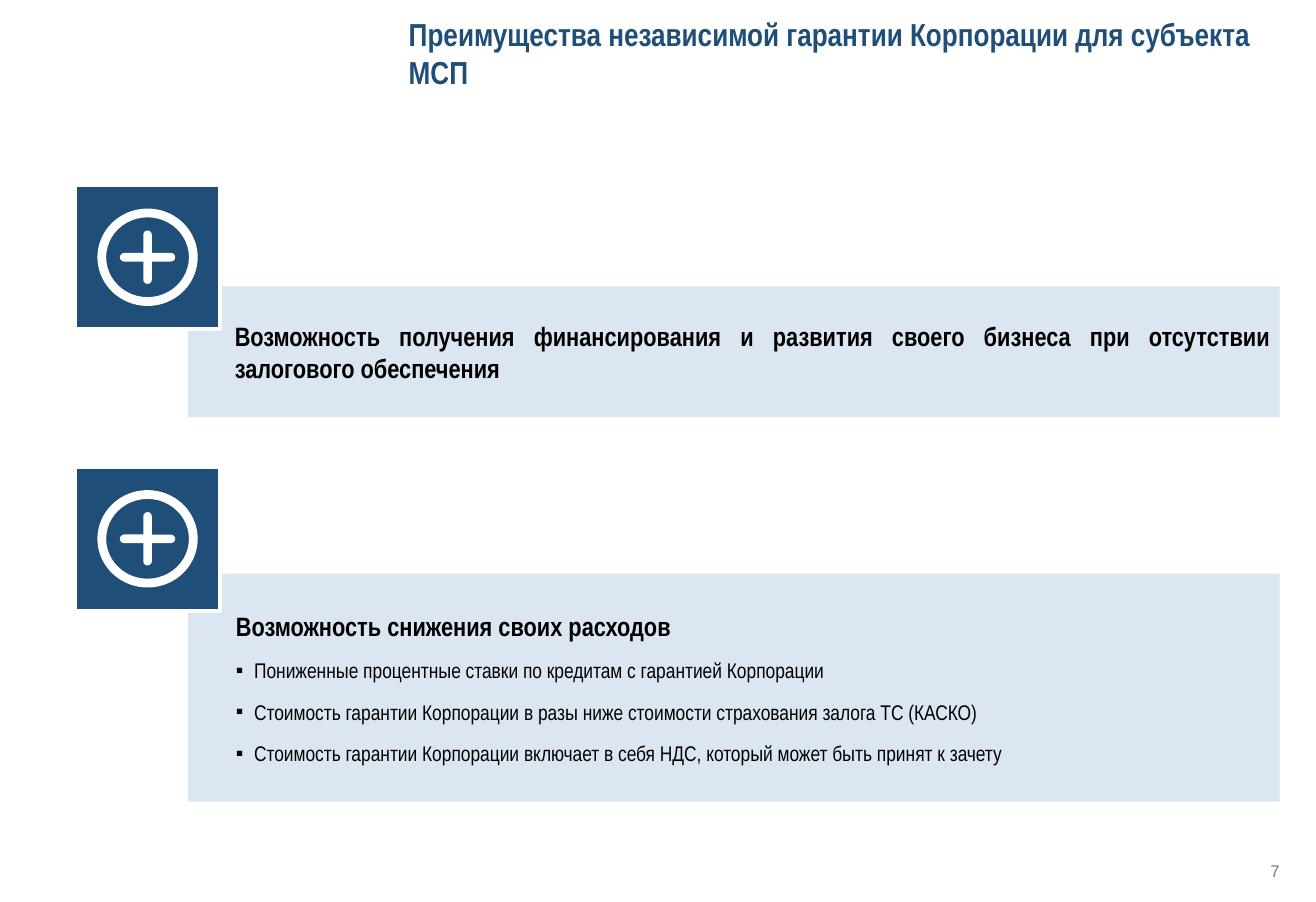
from dataclasses import dataclass

from lxml import etree
from pptx import Presentation
from pptx.dml.color import RGBColor
from pptx.enum import shapes, text
from pptx.oxml import ns
from pptx.util import Inches, Pt


@dataclass(frozen=True)
class Theme:
    navy: str = "1F4E79"
    pale: str = "DCE6F2"
    white: str = "FFFFFF"
    black: str = "000000"
    grey: str = "808080"
    narrow: str = "Arial Narrow"
    plain: str = "Arial"
    title: float = 24
    heading: float = 20
    item: float = 16
    number: float = 12.7
    gap: float = 12
    border: float = 3


class SlideBuilder:
    """Draws the elements of one slide in the given theme."""

    def __init__(self, page, theme):
        self.page = page
        self.theme = theme

    def place(self, shape, left, top, width, height):
        shape.left, shape.top = Inches(left), Inches(top)
        shape.width, shape.height = Inches(width), Inches(height)

    def fill(self, shape, color):
        shape.fill.solid()
        shape.fill.fore_color.rgb = RGBColor.from_string(color)

    def prepare(self, frame, side=0.1, edge=0.05):
        frame.word_wrap = True
        frame.auto_size = text.MSO_AUTO_SIZE.NONE
        frame.vertical_anchor = text.MSO_ANCHOR.MIDDLE
        frame.margin_left = frame.margin_right = Inches(side)
        frame.margin_top = frame.margin_bottom = Inches(edge)

    def style(self, para, size, color, bold=False, face=None):
        font = para.font
        font.name = face or self.theme.narrow
        font.size = Pt(size)
        font.bold = bold
        font.color.rgb = RGBColor.from_string(color)

    def indent(self, para, margin, first=0, bullet=None):
        """Sets the left margin, first-line offset and bullet (None for no bullet)."""
        props = para._p.get_or_add_pPr()
        props.set("marL", str(Inches(margin)))
        props.set("indent", str(Inches(first)))
        if bullet:
            etree.SubElement(props, ns.qn("a:buFont")).set("typeface", self.theme.plain)
            etree.SubElement(props, ns.qn("a:buChar")).set("char", bullet)
        else:
            etree.SubElement(props, ns.qn("a:buNone"))

    def title(self, wording, *area):
        box = self.page.shapes.title
        self.place(box, *area)
        self.prepare(box.text_frame)
        para = box.text_frame.paragraphs[0]
        para.text = wording
        para.alignment = text.PP_ALIGN.LEFT
        self.style(para, self.theme.title, self.theme.navy, bold=True)

    def panel(self, wording, *area):
        box = self.page.shapes.add_shape(
            shapes.MSO_SHAPE.RECTANGLE, *map(Inches, area))
        box.shadow.inherit = False
        box.line.fill.background()
        self.fill(box, self.theme.pale)
        self.prepare(box.text_frame)
        para = box.text_frame.paragraphs[0]
        para.text = wording
        para.alignment = text.PP_ALIGN.JUSTIFY
        self.indent(para, 0.39)
        self.style(para, self.theme.heading, self.theme.black, bold=True)

    def list_panel(self, heading, items, *area):
        box = self.page.placeholders[1]
        self.place(box, *area)
        self.fill(box, self.theme.pale)
        frame = box.text_frame
        self.prepare(frame)
        for index, wording in enumerate([heading, *items]):
            para = frame.add_paragraph() if index else frame.paragraphs[0]
            para.text = wording
            para.alignment = text.PP_ALIGN.JUSTIFY
            para.space_before = Pt(self.theme.gap if index else 0)
            self.indent(para, 0.59, -0.19, "▪" if index else None)
            size = self.theme.item if index else self.theme.heading
            self.style(para, size, self.theme.black, bold=not index)

    def plus_icon(self, left, top, side=1.51):
        """Draws a white plus in a ring, centred on a navy square."""
        group = self.page.shapes.add_group_shape()
        stroke = 0.09
        kinds = shapes.MSO_SHAPE
        parts = [
            (kinds.RECTANGLE, side, side, self.theme.navy, None),
            (kinds.DONUT, 1.05, 1.02, self.theme.white, stroke),
            (kinds.ROUNDED_RECTANGLE, 0.58, stroke, self.theme.white, 0.5),
            (kinds.ROUNDED_RECTANGLE, stroke, 0.56, self.theme.white, 0.5),
        ]
        for kind, width, height, color, adjustment in parts:
            part = group.shapes.add_shape(
                kind, Inches(left + (side - width) / 2),
                Inches(top + (side - height) / 2), Inches(width), Inches(height))
            part.shadow.inherit = False
            self.fill(part, color)
            if adjustment is None:
                part.line.color.rgb = RGBColor.from_string(self.theme.white)
                part.line.width = Pt(self.theme.border)
            else:
                part.adjustments[0] = adjustment
                part.line.fill.background()

    def page_number(self, number, *area):
        box = self.page.shapes.add_textbox(*map(Inches, area))
        self.prepare(box.text_frame, side=0, edge=0)
        box.text_frame.vertical_anchor = text.MSO_ANCHOR.TOP
        para = box.text_frame.paragraphs[0]
        para.text = str(number)
        para.alignment = text.PP_ALIGN.RIGHT
        para.line_spacing = Pt(14.3)
        self.style(para, self.theme.number, self.theme.grey, face=self.theme.plain)


def main():
    deck = Presentation()
    deck.slide_width, deck.slide_height = Inches(13.78), Inches(9.45)
    page = deck.slides.add_slide(deck.slide_layouts[1])
    builder = SlideBuilder(page, Theme())

    builder.title("Преимущества независимой гарантии Корпорации для субъекта МСП",
                  4.18, 0.17, 9.22, 0.76)
    builder.panel("Возможность получения финансирования и развития своего бизнеса "
                  "при отсутствии залогового обеспечения", 1.97, 3, 11.43, 1.37)
    builder.list_panel(
        "Возможность снижения своих расходов",
        ["Пониженные процентные ставки по кредитам с гарантией Корпорации",
         "Стоимость гарантии Корпорации в разы ниже стоимости страхования залога ТС (КАСКО)",
         "Стоимость гарантии Корпорации включает в себя НДС, который может быть принят к зачету"],
        1.97, 6.01, 11.43, 2.39)
    for top in (1.94, 4.89):
        builder.plus_icon(0.79, top)
    builder.page_number(7, 12.98, 9.03, 0.42, 0.2)

    deck.save("out.pptx")


if __name__ == "__main__":
    main()
